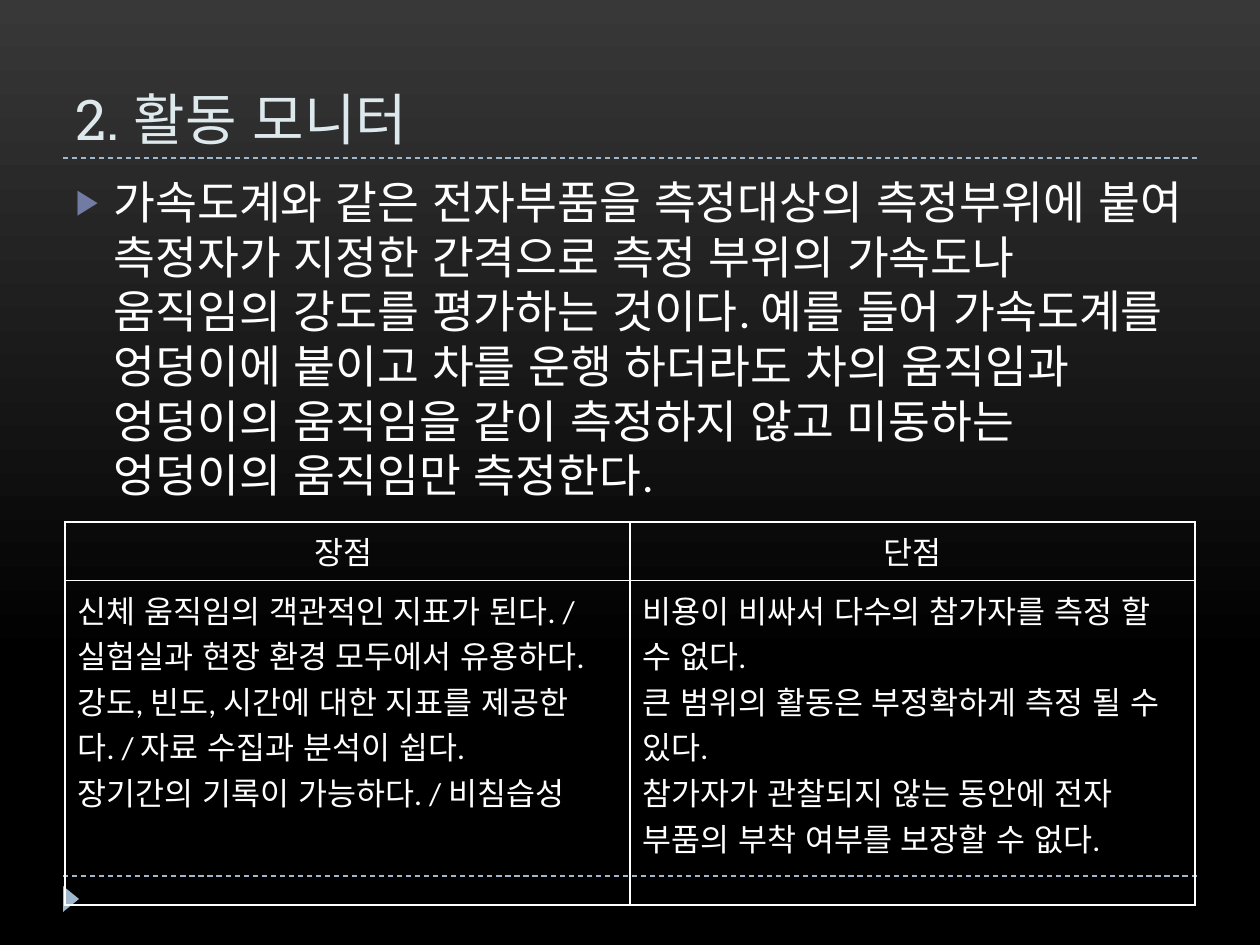
from lxml import etree
from pptx import Presentation
from pptx.dml.color import RGBColor
from pptx.enum.dml import MSO_LINE
from pptx.enum.lang import MSO_LANGUAGE_ID
from pptx.enum.shapes import MSO_CONNECTOR, MSO_SHAPE
from pptx.enum.text import MSO_ANCHOR, MSO_AUTO_SIZE, PP_ALIGN
from pptx.oxml import parse_xml
from pptx.oxml.ns import nsdecls, qn
from pptx.util import Pt

SCALE = 914400 / 126
DASH = MSO_LINE.DASH
KOREAN = MSO_LANGUAGE_ID.KOREAN
STRAIGHT = MSO_CONNECTOR.STRAIGHT
TRIANGLE = MSO_SHAPE.ISOSCELES_TRIANGLE
TOP, BOTTOM = MSO_ANCHOR.TOP, MSO_ANCHOR.BOTTOM
NO_FIT = MSO_AUTO_SIZE.NONE
LEFT, CENTER = PP_ALIGN.LEFT, PP_ALIGN.CENTER

WHITE, BLUE = "FFFFFF", "9FB8CD"
TITLE = "2. 활동 모니터"
BODY = (
    "가속도계와 같은 전자부품을 측정대상의 측정부위에 붙여 측정자가 지정한 "
    "간격으로 측정 부위의 가속도나 움직임의 강도를 평가하는 것이다. 예를 들어 "
    "가속도계를 엉덩이에 붙이고 차를 운행 하더라도 차의 움직임과 엉덩이의 "
    "움직임을 같이 측정하지 않고 미동하는 엉덩이의 움직임만 측정한다."
)
ROWS = [
    [["장점 "], ["단점"]],
    [
        [
            "신체 움직임의 객관적인 지표가 된다. / 실험실과 현장 환경 모두에서 유용하다.",
            "강도, 빈도, 시간에 대한 지표를 제공한다. / 자료 수집과 분석이 쉽다.",
            "장기간의 기록이 가능하다. / 비침습성",
        ],
        [
            "비용이 비싸서 다수의 참가자를 측정 할 수 없다.",
            "큰 범위의 활동은 부정확하게 측정 될 수 있다.",
            "참가자가 관찰되지 않는 동안에 전자 부품의 부착 여부를 보장할 수 없다.",
        ],
    ],
]


def px(n):
    return round(n * SCALE)


def color(code):
    return RGBColor.from_string(code)


def place(shape, x, y, w, h):
    shape.left, shape.top = px(x), px(y)
    shape.width, shape.height = px(w), px(h)


def add_run(para, text, size, font, code):
    run = para.add_run()
    run.text = text
    run.font.size = Pt(size)
    run.font.name = font
    run.font.language_id = KOREAN
    run.font.color.rgb = color(code)


def set_back(slide):
    fill = slide.background.fill
    fill.gradient()
    fill.gradient_angle = 90
    for stop, spot, code in zip(fill.gradient_stops, (0.3, 1), ("000000", "383838")):
        stop.position = spot
        stop.color.rgb = color(code)


def add_rule(slide, y):
    rule = slide.shapes.add_connector(STRAIGHT, px(63), px(y), px(1197), px(y))
    rule.line.color.rgb = color(BLUE)
    rule.line.width = Pt(0.75)
    rule.line.dash_style = DASH
    etree.SubElement(rule._element.spPr, qn("a:effectLst"))


def add_mark(slide):
    mark = slide.shapes.add_shape(TRIANGLE, px(58), px(891), px(26), px(16))
    mark.rotation = 90
    mark.shadow.inherit = False
    mark.fill.solid()
    mark.fill.fore_color.rgb = color(BLUE)
    mark.line.fill.background()


def fill_holder(holder, box, anchor, text, size, font, code):
    place(holder, *box)
    frame = holder.text_frame
    frame.word_wrap = True
    frame.auto_size = NO_FIT
    frame.vertical_anchor = anchor
    para = frame.paragraphs[0]
    para.alignment = LEFT
    add_run(para, text, size, font, code)
    return para


def add_bullet(para):
    para.space_before = Pt(6)
    para.line_spacing = 1.0
    props = para._p.get_or_add_pPr()
    props.set("marL", str(px(38)))
    props.set("indent", str(px(-38)))
    ns = nsdecls("a")
    for part in (
        f'<a:buClr {ns}><a:srgbClr val="727CA3"/></a:buClr>',
        f'<a:buSzPct {ns} val="76000"/>',
        f'<a:buChar {ns} char="▶"/>',
    ):
        props.append(parse_xml(part))


def add_border(cell):
    props = cell._tc.get_or_add_tcPr()
    for side in "LRTB":
        props.append(parse_xml(
            f'<a:ln{side} {nsdecls("a")} w="12700"><a:solidFill>'
            f'<a:srgbClr val="{WHITE}"/></a:solidFill></a:ln{side}>'
        ))


def fill_cell(cell, lines, align):
    add_border(cell)
    cell.fill.background()
    frame = cell.text_frame
    for i, line in enumerate(lines):
        para = frame.add_paragraph() if i else frame.paragraphs[0]
        para.alignment = align
        add_run(para, line, 18, "Calibri", WHITE)


def add_grid(slide):
    grid = slide.shapes.add_table(2, 2, px(65), px(522), px(1130), px(383)).table
    grid.first_row = grid.horz_banding = False
    for row, high, cells, align in zip(grid.rows, (58, 325), ROWS, (CENTER, LEFT)):
        row.height = px(high)
        for cell, lines in zip(row.cells, cells):
            fill_cell(cell, lines, align)


def main():
    deck = Presentation()
    deck.slide_width, deck.slide_height = px(1260), px(945)
    slide = deck.slides.add_slide(deck.slide_layouts[1])
    set_back(slide)
    for y in (876, 158):
        add_rule(slide, y)
    add_mark(slide)
    head, body = slide.placeholders
    fill_holder(head, (63, 22, 1134, 136), BOTTOM, TITLE, 32, "Roboto Slab", "DDE9EC")
    para = fill_holder(body, (63, 168, 1134, 680), TOP, BODY, 26, "Calibri", WHITE)
    add_bullet(para)
    add_grid(slide)
    deck.save("out.pptx")


if __name__ == "__main__":
    main()
